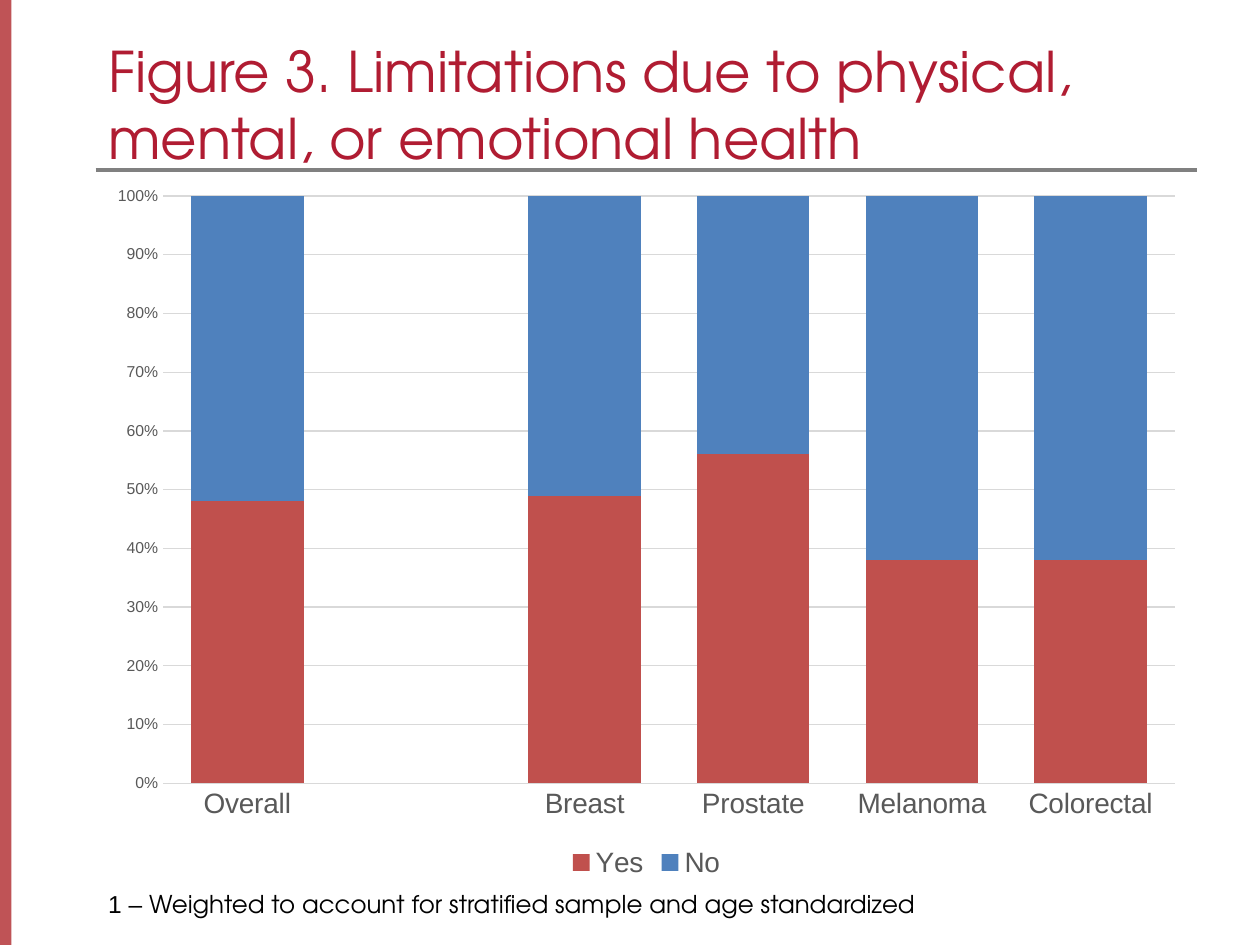
from lxml import etree
from pptx import Presentation
from pptx import util as u
from pptx.chart import data
from pptx.dml import color
from pptx.enum import chart as charts, shapes, text
from pptx.oxml import ns

COLORS = {
    "stripe": "AF282C", "rule": "808080", "title": "B01C32", "note": "000000",
    "label": "595959", "grid": "D9D9D9", "Yes": "C0504D", "No": "4F81BD",
}
HEADING_FONT, BODY_FONT = "TeX Gyre Adventor", "Arial"
LEFT, WIDTH = 54.72, 629.28


def rgb(name):
    return color.RGBColor.from_string(COLORS[name])


def style_font(font, name, size, color_name):
    for attribute, value in {"name": name, "size": u.Pt(size), "bold": False}.items():
        setattr(font, attribute, value)
    font.color.rgb = rgb(color_name)


presentation = Presentation()
presentation.slide_width, presentation.slide_height = u.Pt(720), u.Pt(540)
slide = presentation.slides.add_slide(presentation.slide_layouts[6])

stripe = slide.shapes.add_shape(
    shapes.MSO_SHAPE.RECTANGLE, u.Pt(0), u.Pt(0), u.Pt(6.48), u.Pt(545))
stripe.shadow.inherit = False
stripe.fill.solid()
stripe.fill.fore_color.rgb = rgb("stripe")
stripe.line.fill.background()
stripe_color = stripe.fill._xPr.find(".//" + ns.qn("a:srgbClr"))
etree.SubElement(stripe_color, ns.qn("a:alpha"), val="80000")

rule = slide.shapes.add_connector(
    shapes.MSO_CONNECTOR.STRAIGHT, u.Pt(LEFT), u.Pt(97.2), u.Pt(LEFT + WIDTH), u.Pt(97.2))
rule.line.color.rgb = rgb("rule")
rule.line.width = u.Pt(2.5)
etree.SubElement(rule._element.spPr, ns.qn("a:effectLst"))

text_boxes = [
    (13.68, WIDTH, 84.96, 7.2, 32, "title", [
        ("Figure 3. Limitations due to physical, mental, or emotional health", HEADING_FONT)]),
    (504.72, 554.4, 24.48, 3.6, 14, "note", [
        ("1 – ", BODY_FONT),
        ("Weighted to account for stratified sample and age standardized", HEADING_FONT)]),
]
for top, width, height, inset, size, color_name, runs in text_boxes:
    box = slide.shapes.add_textbox(u.Pt(LEFT), u.Pt(top), u.Pt(width), u.Pt(height))
    frame_format = {
        "word_wrap": True, "vertical_anchor": text.MSO_ANCHOR.TOP,
        "margin_left": u.Pt(7.2), "margin_right": u.Pt(7.2),
        "margin_top": u.Pt(inset), "margin_bottom": u.Pt(inset),
    }
    for attribute, value in frame_format.items():
        setattr(box.text_frame, attribute, value)
    for words, font_name in runs:
        run = box.text_frame.paragraphs[0].add_run()
        run.text = words
        style_font(run.font, font_name, size, color_name)

yes_values = [48, None, 49, 56, 38, 38]
chart_data = data.CategoryChartData()
chart_data.categories = ["Overall", "", "Breast", "Prostate", "Melanoma", "Colorectal"]
chart_data.add_series("Yes", yes_values)
chart_data.add_series("No", [None if value is None else 100 - value for value in yes_values])
chart = slide.shapes.add_chart(
    charts.XL_CHART_TYPE.COLUMN_STACKED_100,
    u.Pt(LEFT), u.Pt(98.64), u.Pt(WIDTH), u.Pt(406.08), chart_data).chart
style_font(chart.font, BODY_FONT, 10, "note")
chart.has_title = False

plot = chart.plots[0]
for attribute, value in {"gap_width": 50, "overlap": 100, "vary_by_categories": False}.items():
    setattr(plot, attribute, value)
for series in plot.series:
    series.format.fill.solid()
    series.format.fill.fore_color.rgb = rgb(series.name)

for axis, size in [(chart.category_axis, 16), (chart.value_axis, 9)]:
    axis.major_tick_mark = axis.minor_tick_mark = charts.XL_TICK_MARK.NONE
    style_font(axis.tick_labels.font, BODY_FONT, size, "label")

value_axis = chart.value_axis
value_axis_format = {
    "minimum_scale": 0, "maximum_scale": 1, "major_unit": 0.1, "has_major_gridlines": True}
for attribute, value in value_axis_format.items():
    setattr(value_axis, attribute, value)
value_axis.tick_labels.number_format = "0%"
value_axis.tick_labels.number_format_is_linked = False
value_axis.format.line.fill.background()
for line in [chart.category_axis.format.line, value_axis.major_gridlines.format.line]:
    line.color.rgb = rgb("grid")
    line.width = u.Pt(0.75)

chart.has_legend = True
chart.legend.position = charts.XL_LEGEND_POSITION.BOTTOM
chart.legend.include_in_layout = False
style_font(chart.legend.font, BODY_FONT, 16, "label")

presentation.save("out.pptx")
